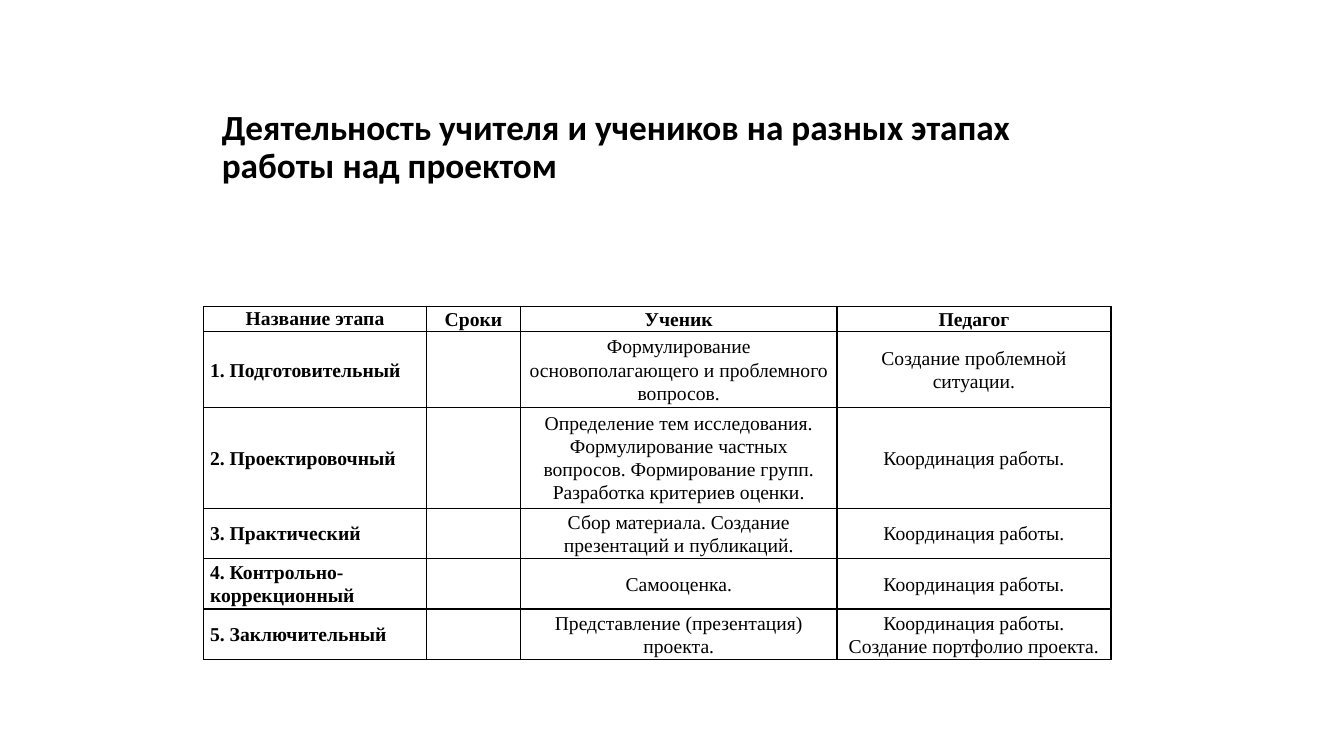
from pptx import Presentation
from pptx.dml.color import RGBColor
from pptx.enum.text import MSO_ANCHOR as Anchor, MSO_AUTO_SIZE as AutoSize, PP_ALIGN as Align
from pptx.oxml import parse_xml
from pptx.oxml.ns import nsdecls
from pptx.util import Pt

COLORS = {"text": "000000", "border": "000000"}
COLUMN_WIDTHS = [159, 67.3, 226, 195.7]
ROW_HEIGHTS = [18, 54, 72, 36, 36, 36]
STAGES = [
    ["Название этапа", "Сроки", "Ученик", "Педагог"],
    ["1. Подготовительный", "",
     "Формулирование основополагающего и проблемного вопросов.",
     "Создание проблемной ситуации."],
    ["2. Проектировочный", "",
     "Определение тем исследования. Формулирование частных вопросов. "
     "Формирование групп. Разработка критериев оценки.",
     "Координация работы."],
    ["3. Практический", "",
     "Сбор материала. Создание презентаций и публикаций.",
     "Координация работы."],
    ["4. Контрольно-коррекционный", "", "Самооценка.", "Координация работы."],
    ["5. Заключительный", "",
     "Представление (презентация) проекта.",
     "Координация работы. Создание портфолио проекта."],
]


def set_font(paragraph, name, size, bold):
    font = paragraph.font
    font.name, font.size, font.bold = name, Pt(size), bold
    font.color.rgb = RGBColor.from_string(COLORS["text"])


def add_borders(cell):
    properties = cell._tc.get_or_add_tcPr()
    for side in "LRTB":
        properties.append(parse_xml(
            f'<a:ln{side} {nsdecls("a")} w="{Pt(1)}"><a:solidFill>'
            f'<a:srgbClr val="{COLORS["border"]}"/></a:solidFill></a:ln{side}>'))


deck = Presentation()
deck.slide_width, deck.slide_height = Pt(960), Pt(540)
page = deck.slides.add_slide(deck.slide_layouts[5])

title = page.shapes.title
title.left, title.top, title.width, title.height = Pt(151.2), Pt(88.6), Pt(653), Pt(61.2)
frame = title.text_frame
frame.text = "Деятельность учителя и учеников на разных этапах работы над проектом"
frame.word_wrap = True
frame.auto_size = AutoSize.NONE
frame.vertical_anchor = Anchor.MIDDLE
frame.margin_bottom = Pt(31)  # lifts the heading above the middle of its box
heading = frame.paragraphs[0]
heading.alignment = Align.LEFT
heading.line_spacing = 0.9
set_font(heading, "Calibri", 25.2, True)

table = page.shapes.add_table(
    len(ROW_HEIGHTS), len(COLUMN_WIDTHS), Pt(145.6), Pt(219),
    Pt(sum(COLUMN_WIDTHS)), Pt(sum(ROW_HEIGHTS))).table
table.first_row = table.horz_banding = False
for column, width in zip(table.columns, COLUMN_WIDTHS):
    column.width = Pt(width)
for row, height in zip(table.rows, ROW_HEIGHTS):
    row.height = Pt(height)

for row_index, stage in enumerate(STAGES):
    for column_index, text in enumerate(stage):
        is_header, is_name = row_index == 0, column_index == 0
        cell = table.cell(row_index, column_index)
        add_borders(cell)
        cell.fill.background()
        cell.margin_left = cell.margin_right = Pt(4.5)
        cell.margin_top = cell.margin_bottom = 0
        cell.vertical_anchor = Anchor.TOP if is_header and is_name else Anchor.MIDDLE
        cell.text = text
        para = cell.text_frame.paragraphs[0]
        para.alignment = Align.LEFT if is_name and not is_header else Align.CENTER
        para.line_spacing = 1.07
        para.space_before = para.space_after = Pt(4.5)
        set_font(para, "Times New Roman", 14, is_header or is_name)

deck.save("out.pptx")
